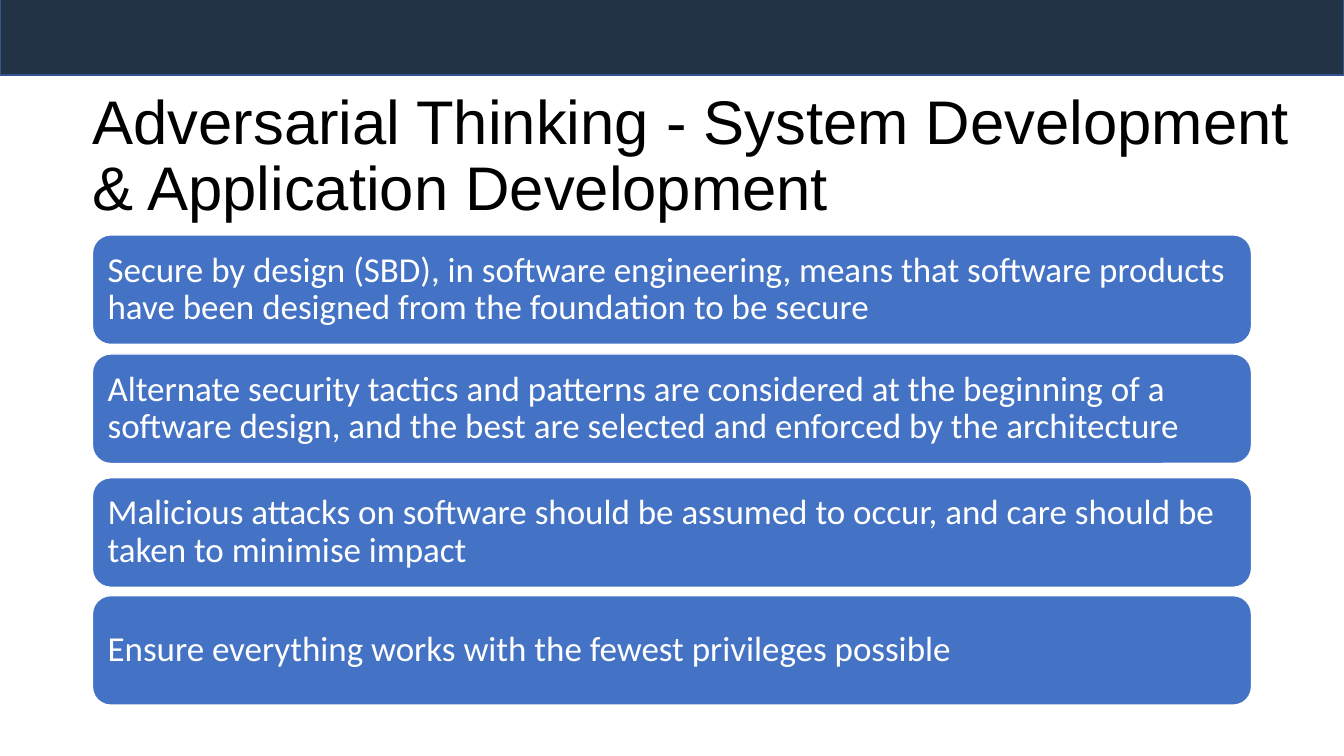
from pptx import Presentation
from pptx.dml.color import RGBColor
from pptx.enum.shapes import MSO_SHAPE
from pptx.enum.text import MSO_ANCHOR, PP_ALIGN
from pptx.util import Cm, Pt

NAVY = RGBColor(0x22, 0x33, 0x46)
NAVY_EDGE = RGBColor(0x32, 0x54, 0x91)
BLUE = RGBColor(0x44, 0x72, 0xC4)
WHITE = RGBColor(0xFF, 0xFF, 0xFF)
BLACK = RGBColor(0x00, 0x00, 0x00)

PRINCIPLES = [
    (5.92, "Secure by design (SBD), in software engineering, means that software products have been designed from the foundation to be secure"),
    (8.92, "Alternate security tactics and patterns are considered at the beginning of a software design, and the best are selected and enforced by the architecture"),
    (12.04, "Malicious attacks on software should be assumed to occur, and care should be taken to minimise impact"),
    (15.01, "Ensure everything works with the fewest privileges possible"),
]


def add_panel(kind, left, top, width, height, fill, edge):
    panel = slide.shapes.add_shape(kind, Cm(left), Cm(top), Cm(width), Cm(height))
    panel.shadow.inherit = False
    panel.fill.solid()
    panel.fill.fore_color.rgb = fill
    panel.line.color.rgb = edge
    panel.line.width = Pt(1)
    return panel


def write_text(frame, text, font_name, size, color):
    frame.text = text
    frame.word_wrap = True
    frame.vertical_anchor = MSO_ANCHOR.MIDDLE
    paragraph = frame.paragraphs[0]
    paragraph.alignment = PP_ALIGN.LEFT
    paragraph.line_spacing = 0.9
    font = paragraph.runs[0].font
    font.name = font_name
    font.size = Pt(size)
    font.color.rgb = color


prs = Presentation()
prs.slide_width = Cm(33.87)
prs.slide_height = Cm(19.05)
slide = prs.slides.add_slide(prs.slide_layouts[6])

add_panel(MSO_SHAPE.RECTANGLE, 0, -0.09, 33.87, 1.98, NAVY, NAVY_EDGE)

title = slide.shapes.add_textbox(Cm(2.08), Cm(2.13), Cm(30.78), Cm(3.68))
write_text(title.text_frame, "Adversarial Thinking - System Development & Application Development",
           "Arial", 44, BLACK)

for top, principle in PRINCIPLES:
    card = add_panel(MSO_SHAPE.ROUNDED_RECTANGLE, 2.33, top, 29.21, 2.76, BLUE, WHITE)
    write_text(card.text_frame, principle, "Calibri", 25, WHITE)

prs.save("out.pptx")
